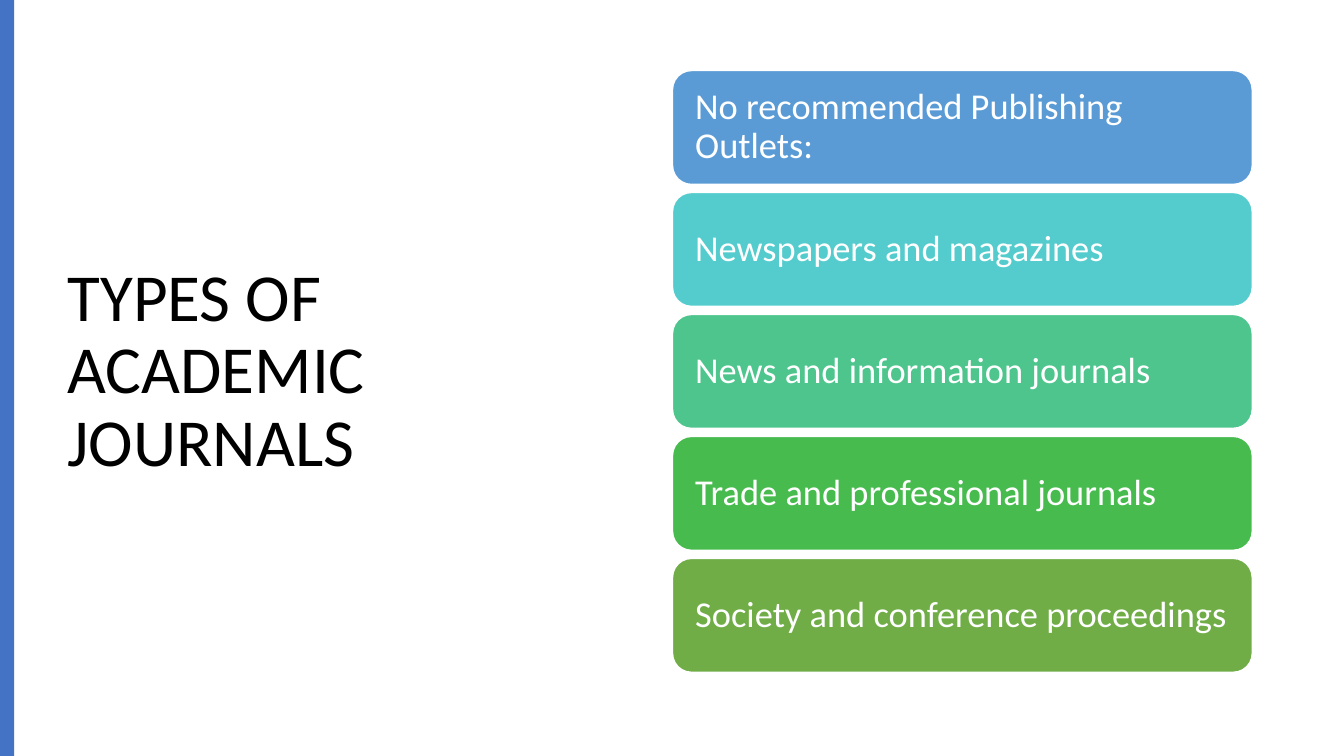
"""Builds the slide on types of academic journals."""
from dataclasses import dataclass

from pptx import Presentation
from pptx.dml.color import RGBColor
from pptx.enum.shapes import MSO_SHAPE
from pptx.enum.text import MSO_ANCHOR, MSO_AUTO_SIZE, PP_ALIGN
from pptx.util import Inches, Pt

RECTANGLE = MSO_SHAPE.RECTANGLE
ROUNDED = MSO_SHAPE.ROUNDED_RECTANGLE
MIDDLE = MSO_ANCHOR.MIDDLE
LEFT = PP_ALIGN.LEFT
NO_AUTOFIT = MSO_AUTO_SIZE.NONE
TITLE_ONLY = 5


@dataclass(frozen=True)
class Theme:
    font: str = "Calibri"
    title_size: int = 48
    card_size: int = 26
    line_spacing: float = 0.9
    ink: str = "000000"
    paper: str = "FFFFFF"
    accent: str = "4472C4"
    cards: tuple = ("5B9BD5", "54CCCD", "4DC58D", "48BB4F", "70AD47")


class SlideBuilder:
    def __init__(self, deck, theme):
        self.theme = theme
        self.page = deck.slides.add_slide(deck.slide_layouts[TITLE_ONLY])

    def set_text(self, shape, text, size, color, margin):
        frame = shape.text_frame
        frame.word_wrap = True
        frame.auto_size = NO_AUTOFIT
        frame.vertical_anchor = MIDDLE
        frame.margin_left = frame.margin_right = Inches(margin)
        para = frame.paragraphs[0]
        para.alignment = LEFT
        para.line_spacing = self.theme.line_spacing
        span = para.add_run()
        span.text = text
        span.font.name = self.theme.font
        span.font.size = Pt(size)
        span.font.color.rgb = RGBColor.from_string(color)

    def title(self, text, left, top, width, height):
        box = self.page.shapes.title
        box.left, box.top = Inches(left), Inches(top)
        box.width, box.height = Inches(width), Inches(height)
        self.set_text(box, text, self.theme.title_size, self.theme.ink, 0.1)

    def block(self, kind, fill, left, top, width, height):
        shape = self.page.shapes.add_shape(
            kind, Inches(left), Inches(top), Inches(width), Inches(height))
        shape.shadow.inherit = False
        shape.fill.solid()
        shape.fill.fore_color.rgb = RGBColor.from_string(fill)
        shape.line.fill.background()
        return shape

    def card(self, text, fill, left, top, width, height):
        shape = self.block(ROUNDED, fill, left, top, width, height)
        shape.line.color.rgb = RGBColor.from_string(self.theme.paper)
        shape.line.width = Pt(1)
        self.set_text(shape, text, self.theme.card_size, self.theme.paper, 0.17)


def main():
    theme = Theme()
    deck = Presentation()
    deck.slide_width, deck.slide_height = Inches(13.33), Inches(7.5)
    builder = SlideBuilder(deck, theme)
    builder.title("TYPES OF ACADEMIC JOURNALS", 0.57, 0.68, 5.67, 6.02)
    builder.block(RECTANGLE, theme.accent, 0, 0, 0.14, 7.5)

    outlets = (
        "No recommended Publishing Outlets:",
        "Newspapers and magazines",
        "News and information journals",
        "Trade and professional journals",
        "Society and conference proceedings",
    )
    first_top, card_height, gap = 0.7, 1.13, 0.08
    for index, (outlet, fill) in enumerate(zip(outlets, theme.cards)):
        top = first_top + index * (card_height + gap)
        builder.card(outlet, fill, 6.67, top, 5.75, card_height)

    deck.save("out.pptx")


if __name__ == "__main__":
    main()
